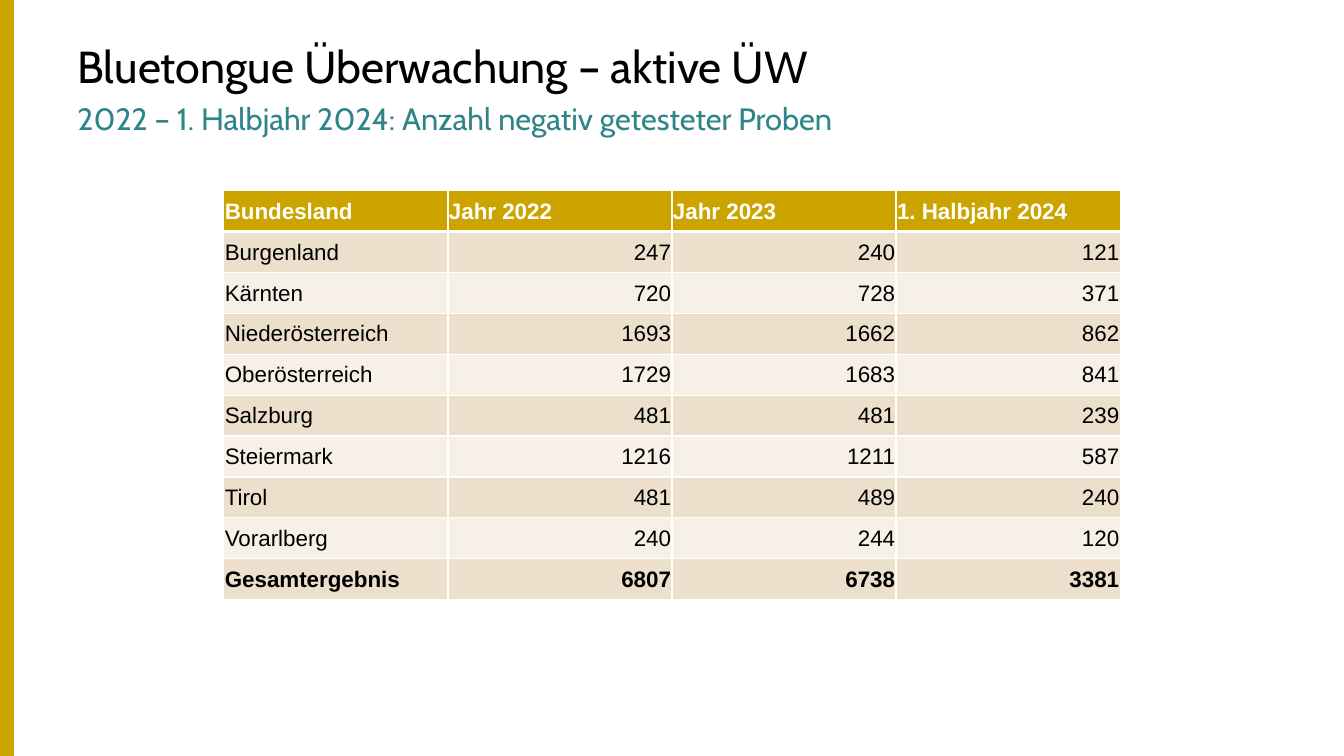
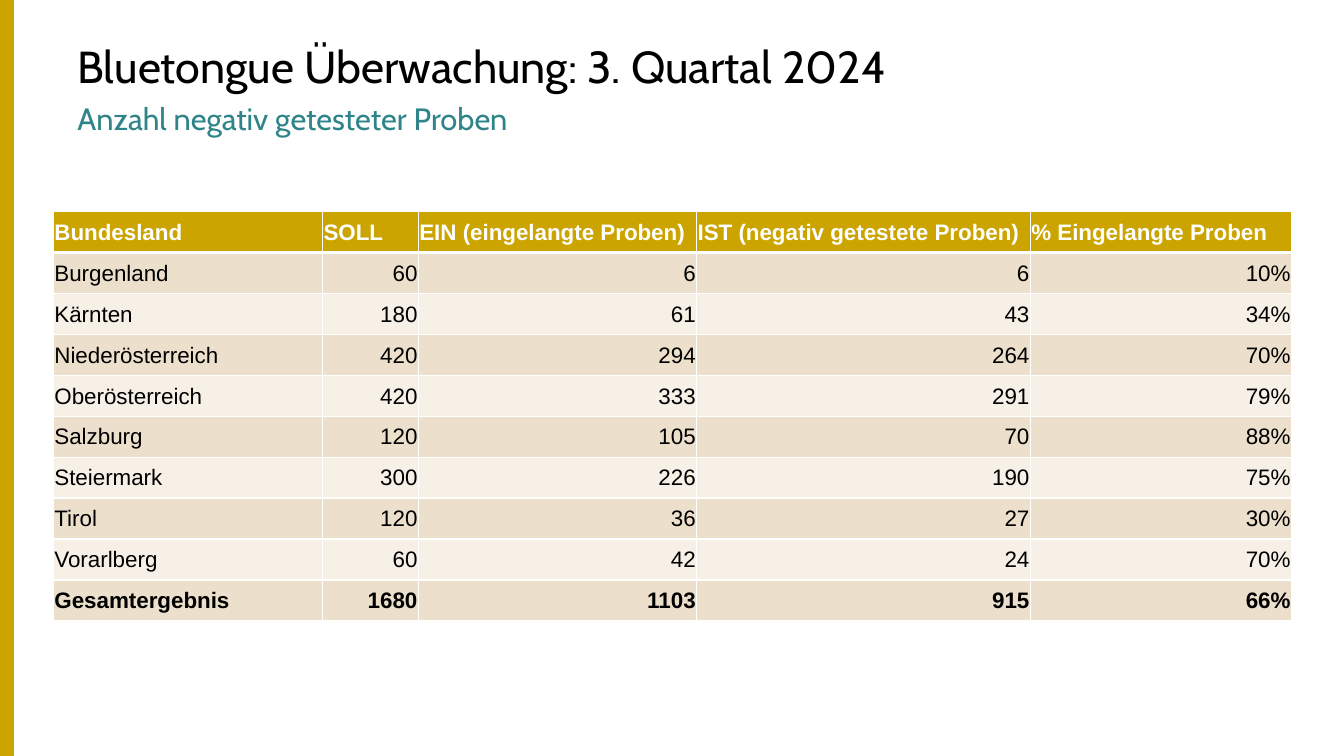
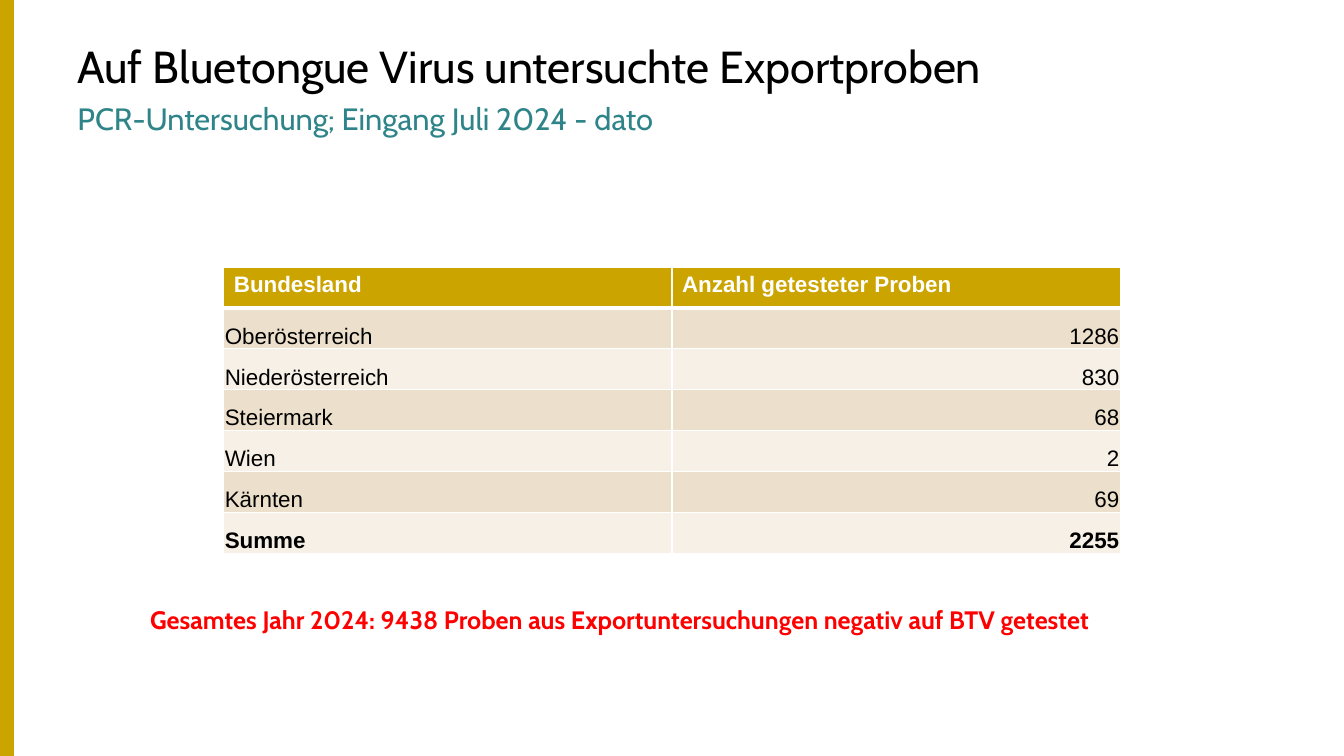
from dataclasses import dataclass
from typing import Optional

from lxml.etree import SubElement
from pptx import Presentation
from pptx.dml.color import RGBColor
from pptx.enum.shapes import MSO_SHAPE as Shape
from pptx.enum.text import MSO_ANCHOR as Anchor, MSO_AUTO_SIZE as AutoSize, PP_ALIGN as Align
from pptx.oxml.ns import qn
from pptx.util import Inches, Pt


@dataclass(frozen=True)
class Theme:
    gold: str = "CCA400"
    teal: str = "2E8488"
    black: str = "000000"
    white: str = "FFFFFF"
    red: str = "FF0000"
    bands: tuple[str, str] = ("ECE0CC", "F6F0E7")
    heading_font: str = "Cabin"
    table_font: str = "Arial"
    title_size: int = 32
    subtitle_size: int = 22
    note_size: int = 18
    table_size: int = 16
    subtitle_leading: int = 25
    border: int = 1
    header_border: int = 3


THEME = Theme()


@dataclass(frozen=True)
class TextStyle:
    font: str
    size: int
    color: str
    bold: bool = False


TITLE = TextStyle(THEME.heading_font, THEME.title_size, THEME.black)
SUBTITLE = TextStyle(THEME.heading_font, THEME.subtitle_size, THEME.teal)
NOTE = TextStyle(THEME.heading_font, THEME.note_size, THEME.red, True)
HEADER = TextStyle(THEME.table_font, THEME.table_size, THEME.white, True)
BODY = TextStyle(THEME.table_font, THEME.table_size, THEME.black)
TOTAL = TextStyle(THEME.table_font, THEME.table_size, THEME.black, True)


@dataclass(frozen=True)
class TableData:
    left: float
    top: float
    height: float
    widths: tuple[float, ...]
    rows: tuple[tuple[str, ...], ...]
    anchor: Anchor = Anchor.MIDDLE
    padded_header: bool = False


@dataclass(frozen=True)
class SlideData:
    title: str
    subtitle: str
    table: TableData
    note: Optional[str] = None


# Content
NARROW_WIDTH = 8.89

SLIDES = (
    SlideData(
        "Bluetongue Überwachung – aktive ÜW",
        "2022 – 1. Halbjahr 2024: Anzahl negativ getesteter Proben",
        TableData(2.22, 1.89, 4.06, (NARROW_WIDTH / 4,) * 4, (
            ("Bundesland", "Jahr 2022", "Jahr 2023", "1. Halbjahr 2024"),
            ("Burgenland", "247", "240", "121"),
            ("Kärnten", "720", "728", "371"),
            ("Niederösterreich", "1693", "1662", "862"),
            ("Oberösterreich", "1729", "1683", "841"),
            ("Salzburg", "481", "481", "239"),
            ("Steiermark", "1216", "1211", "587"),
            ("Tirol", "481", "489", "240"),
            ("Vorarlberg", "240", "244", "120"),
            ("Gesamtergebnis", "6807", "6738", "3381"),
        )),
    ),
    SlideData(
        "Bluetongue Überwachung: 3. Quartal 2024",
        "Anzahl negativ getesteter Proben",
        TableData(0.53, 2.1, 4.06, (2.67, 0.95, 2.76, 3.31, 2.59), (
            ("Bundesland", "SOLL", "EIN (eingelangte Proben)",
             "IST (negativ getestete Proben)", "% Eingelangte Proben"),
            ("Burgenland", "60", "6", "6", "10%"),
            ("Kärnten", "180", "61", "43", "34%"),
            ("Niederösterreich", "420", "294", "264", "70%"),
            ("Oberösterreich", "420", "333", "291", "79%"),
            ("Salzburg", "120", "105", "70", "88%"),
            ("Steiermark", "300", "226", "190", "75%"),
            ("Tirol", "120", "36", "27", "30%"),
            ("Vorarlberg", "60", "42", "24", "70%"),
            ("Gesamtergebnis", "1680", "1103", "915", "66%"),
        )),
    ),
    SlideData(
        "Auf Bluetongue Virus untersuchte Exportproben",
        "PCR-Untersuchung; Eingang Juli 2024 - dato",
        TableData(2.22, 2.65, 2.84, (NARROW_WIDTH / 2,) * 2, (
            ("Bundesland", "Anzahl getesteter Proben"),
            ("Oberösterreich", "1286"),
            ("Niederösterreich", "830"),
            ("Steiermark", "68"),
            ("Wien", "2"),
            ("Kärnten", "69"),
            ("Summe", "2255"),
        ), Anchor.BOTTOM, True),
        "Gesamtes Jahr 2024: 9438 Proben aus Exportuntersuchungen negativ auf BTV getestet",
    ),
)


# Text helpers
def rgb(color: str) -> RGBColor:
    return RGBColor.from_string(color)


def write(p, text: str, style: TextStyle) -> None:
    p.text = text
    for r in p.runs:
        r.font.name = style.font
        r.font.size = Pt(style.size)
        r.font.bold = style.bold
        r.font.color.rgb = rgb(style.color)


def add_text(s, left: float, top: float, width: float, height: float,
             text: str, style: TextStyle, inset_top: float = 0.05):
    tf = s.shapes.add_textbox(Inches(left), Inches(top), Inches(width), Inches(height)).text_frame
    tf.word_wrap = True
    tf.margin_top = Inches(inset_top)
    write(tf.paragraphs[0], text, style)
    return tf


# Table helpers
def set_borders(cell, top: int, bottom: int) -> None:
    tc_pr = cell._tc.get_or_add_tcPr()
    widths = {"a:lnL": THEME.border, "a:lnR": THEME.border, "a:lnT": top, "a:lnB": bottom}
    for i, (tag, width) in enumerate(widths.items()):
        ln = SubElement(tc_pr, qn(tag), w=str(Pt(width)))
        fill = SubElement(ln, qn("a:solidFill"))
        SubElement(fill, qn("a:srgbClr"), val=THEME.white)
        tc_pr.insert(i, ln)


def fill_cell(cell, data: TableData, row: int, col: int) -> None:
    is_header = row == 0
    is_total = row == len(data.rows) - 1
    if not (is_header and data.padded_header):
        cell.vertical_anchor = data.anchor
        cell.margin_left = cell.margin_right = cell.margin_top = Inches(0.01)
        cell.margin_bottom = Inches(0)
    p = cell.text_frame.paragraphs[0]
    write(p, data.rows[row][col], HEADER if is_header else TOTAL if is_total else BODY)
    p.alignment = Align.LEFT if is_header or col == 0 else Align.RIGHT
    cell.fill.solid()
    cell.fill.fore_color.rgb = rgb(THEME.gold if is_header else THEME.bands[(row - 1) % 2])
    set_borders(cell,
                top=THEME.header_border if row == 1 else THEME.border,
                bottom=THEME.header_border if is_header else THEME.border)


def add_data_table(s, data: TableData) -> None:
    table = s.shapes.add_table(
        len(data.rows), len(data.widths), Inches(data.left), Inches(data.top),
        Inches(sum(data.widths)), Inches(data.height)).table
    table.horz_banding = False
    for column, width in zip(table.columns, data.widths):
        column.width = Inches(width)
    for i, row in enumerate(table.rows):
        row.height = Inches(data.height / len(data.rows))
        for j, cell in enumerate(row.cells):
            fill_cell(cell, data, i, j)


# Slides
def add_side_band(s, height: int) -> None:
    sp = s.shapes.add_shape(Shape.RECTANGLE, 0, 0, Inches(0.13), height)
    sp.shadow.inherit = False
    sp.fill.solid()
    sp.fill.fore_color.rgb = rgb(THEME.gold)
    sp.line.color.rgb = rgb(THEME.gold)
    sp.line.width = Pt(THEME.border)


def add_slide(prs, data: SlideData) -> None:
    s = prs.slides.add_slide(prs.slide_layouts[6])
    add_side_band(s, prs.slide_height)
    add_text(s, 0.67, 0.38, 10.53, 0.52, data.title, TITLE, inset_top=0)
    tf = add_text(s, 0.67, 0.97, 10.53, 0.38, data.subtitle, SUBTITLE, inset_top=0.04)
    tf.paragraphs[0].line_spacing = Pt(THEME.subtitle_leading)
    add_data_table(s, data.table)
    if data.note:
        tf = add_text(s, 1.39, 5.95, 10.39, 0.4, data.note, NOTE)
        tf.auto_size = AutoSize.SHAPE_TO_FIT_TEXT


def main() -> None:
    prs = Presentation()
    prs.slide_width, prs.slide_height = Inches(13.33), Inches(7.5)
    for data in SLIDES:
        add_slide(prs, data)
    prs.save("out.pptx")


if __name__ == "__main__":
    main()
